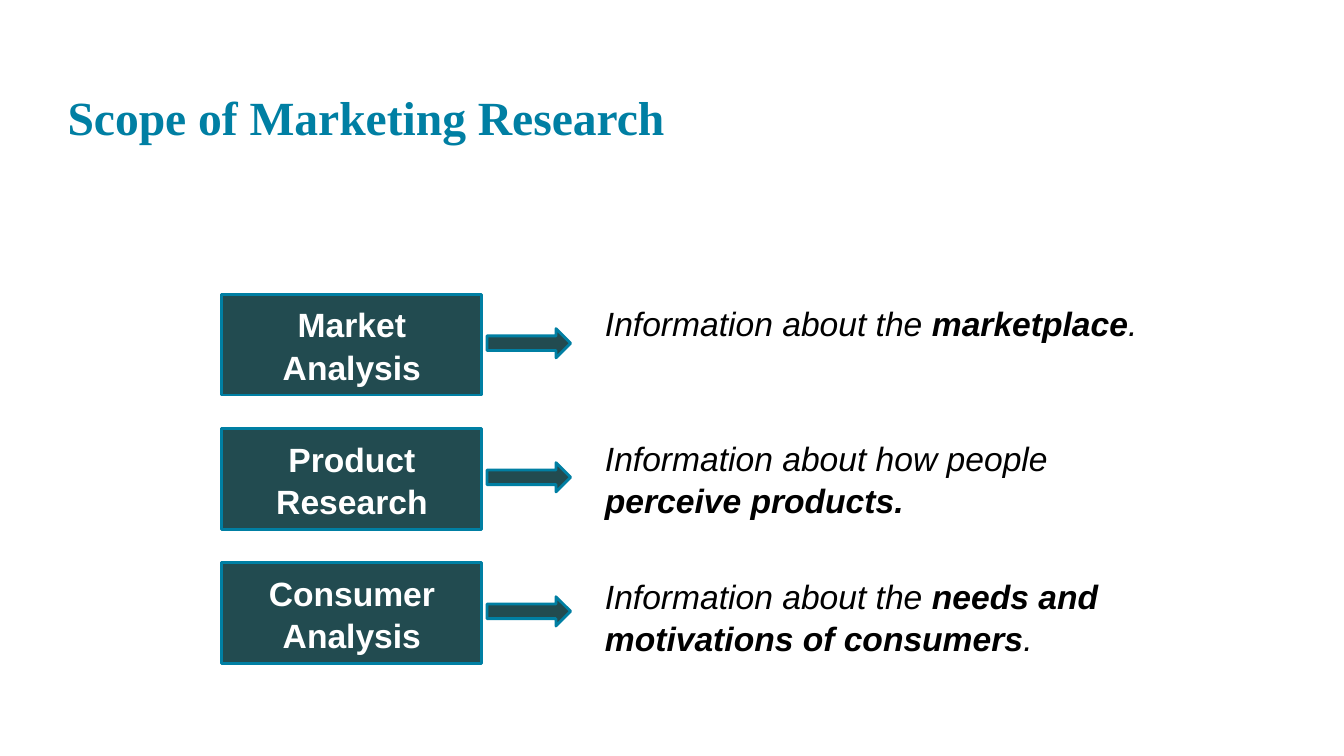
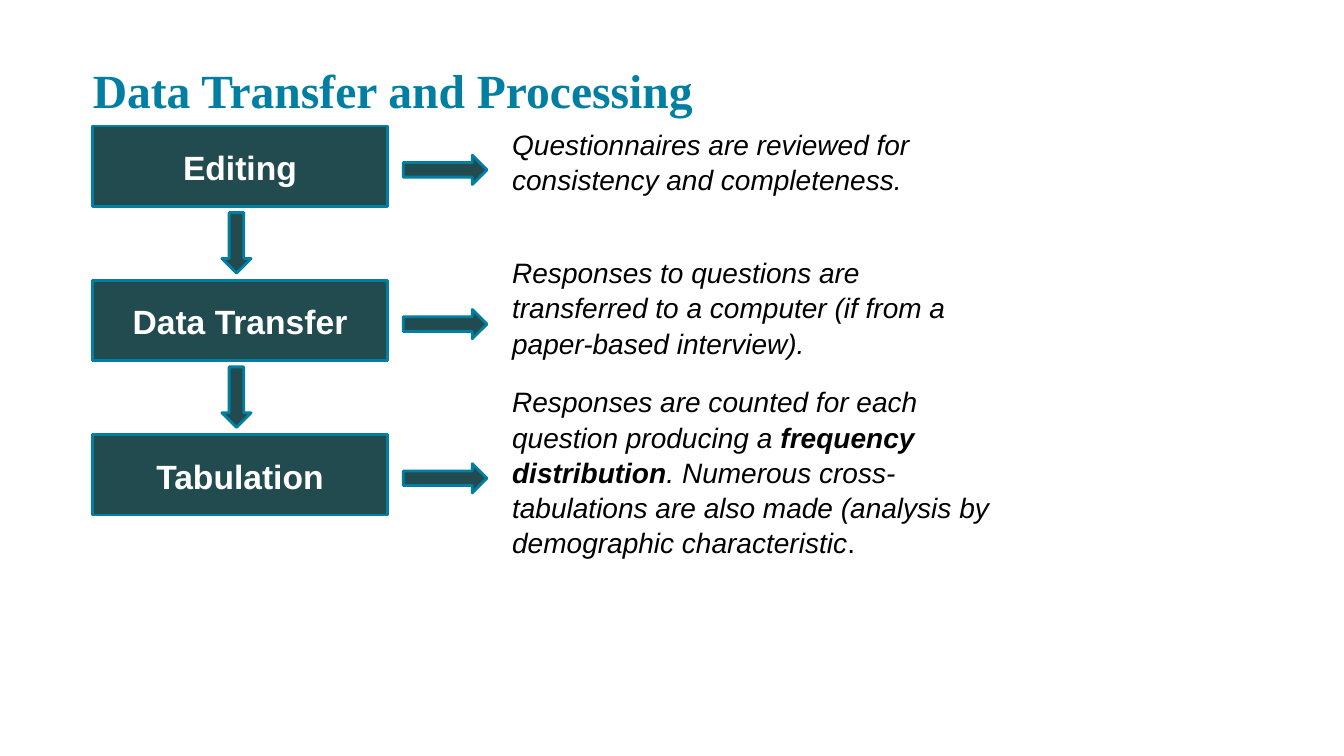
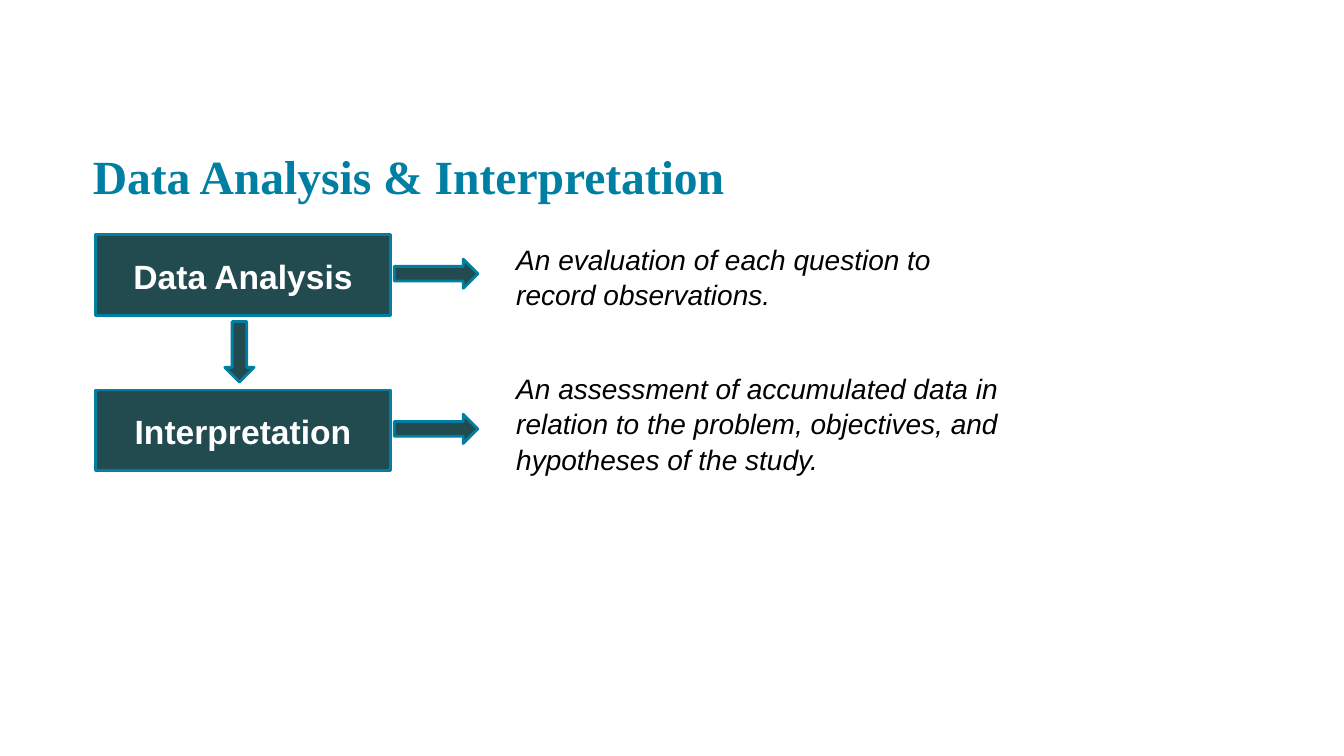
from pptx import Presentation
from pptx.dml.color import RGBColor
from pptx.enum.shapes import MSO_SHAPE
from pptx.enum.text import MSO_ANCHOR, MSO_AUTO_SIZE, PP_ALIGN
from pptx.util import Inches, Pt

RECTANGLE = MSO_SHAPE.RECTANGLE
RIGHT_ARROW = MSO_SHAPE.RIGHT_ARROW
DOWN_ARROW = MSO_SHAPE.DOWN_ARROW
TOP, MIDDLE, BOTTOM = MSO_ANCHOR.TOP, MSO_ANCHOR.MIDDLE, MSO_ANCHOR.BOTTOM
LEFT, CENTER = PP_ALIGN.LEFT, PP_ALIGN.CENTER
NO_AUTOFIT = MSO_AUTO_SIZE.NONE
TITLE_ONLY = 5

PLAIN = {"italic": True, "bold": False}
STRONG = {"italic": True, "bold": True}
UPRIGHT = {"italic": False, "bold": False}


def color(value):
    return RGBColor.from_string(value)


class Deck:
    teal = "007FA3"
    dark = "224B50"
    title_font = {"name": "Times New Roman", "size": Pt(34), "bold": True}
    label_font = {"name": "Arial", "size": Pt(24), "bold": True}
    arrow_length = 0.83
    arrow_width = 0.29

    def __init__(self):
        self.presentation = Presentation()
        self.presentation.slide_width = Inches(13.33)
        self.presentation.slide_height = Inches(7.5)
        self.slide = None

    def set_text(self, shape, runs, ink, anchor, alignment=LEFT, inset=0, spacing=1.0):
        frame = shape.text_frame
        settings = {"word_wrap": True, "auto_size": NO_AUTOFIT, "vertical_anchor": anchor}
        for side in ("left", "top", "right", "bottom"):
            settings["margin_" + side] = Inches(inset)
        for name, value in settings.items():
            setattr(frame, name, value)
        paragraph = frame.paragraphs[0]
        paragraph.alignment = alignment
        paragraph.line_spacing = spacing
        paragraph.space_before = Pt(0)
        for text, font_format in runs:
            run = paragraph.add_run()
            run.text = text
            run.font.color.rgb = color(ink)
            for name, value in font_format.items():
                setattr(run.font, name, value)

    def start(self, text, left, top, width, height):
        layout = self.presentation.slide_layouts[TITLE_ONLY]
        self.slide = self.presentation.slides.add_slide(layout)
        title = self.slide.shapes.title
        place = {"left": left, "top": top, "width": width, "height": height}
        for name, value in place.items():
            setattr(title, name, Inches(value))
        self.set_text(title, [(text, self.title_font)], self.teal, BOTTOM)

    def block(self, kind, left, top, width, height):
        shape = self.slide.shapes.add_shape(
            kind, Inches(left), Inches(top), Inches(width), Inches(height))
        shape.shadow.inherit = False
        shape.fill.solid()
        shape.fill.fore_color.rgb = color(self.dark)
        shape.line.color.rgb = color(self.teal)
        shape.line.width = Pt(2)
        return shape

    def label(self, text, left, top, width, height, inset):
        box = self.block(RECTANGLE, left, top, width, height)
        self.set_text(box, [(text, self.label_font)], "FFFFFF", MIDDLE, CENTER, inset, 1.05)

    def right_arrow(self, left, top):
        self.block(RIGHT_ARROW, left, top, self.arrow_length, self.arrow_width)

    def down_arrow(self, left, top):
        self.block(DOWN_ARROW, left, top, self.arrow_width, 0.6)

    def description(self, runs, left, top, width, height, size):
        box = self.slide.shapes.add_textbox(
            Inches(left), Inches(top), Inches(width), Inches(height))
        base = {"name": "Arial", "size": Pt(size)}
        styled = [(text, {**base, **style}) for text, style in runs]
        self.set_text(box, styled, "000000", TOP, spacing=1.05)

    def rows(self, rows, left, top, pitch, width, height, arrow_left, arrow_drop,
             text_left, size, inset=0, chained=False):
        for index, (label, text_top, text_width, text_height, runs) in enumerate(rows):
            row_top = top + index * pitch
            self.label(label, left, row_top, width, height, inset)
            self.right_arrow(arrow_left, row_top + arrow_drop)
            self.description(runs, text_left, text_top, text_width, text_height, size)
            if chained and index < len(rows) - 1:
                self.down_arrow(left + 1.28, row_top + height + 0.06)


def main():
    deck = Deck()

    deck.start("Scope of Marketing Research", 0.67, 0.24, 12, 1.2)
    deck.rows([
        ("Market Analysis", 2.99, 6.08, 0.8, [
            ("Information about the ", PLAIN), ("marketplace", STRONG), (".", PLAIN)]),
        ("Product Research", 4.32, 5.08, 0.8, [
            ("Information about how people ", PLAIN), ("perceive products.", STRONG)]),
        ("Consumer Analysis", 5.69, 5.08, 0.8, [
            ("Information about the ", PLAIN),
            ("needs and motivations of consumers", STRONG), (".", PLAIN)]),
    ], left=2.2, top=2.92, pitch=1.33, width=2.58, height=1, arrow_left=4.83,
        arrow_drop=0.34, text_left=6, size=24, inset=0.1)

    deck.start("Data Transfer and Processing", 0.92, 0.57, 9, 0.6)
    deck.rows([
        ("Editing", 1.25, 4.83, 0.8, [
            ("Questionnaires are reviewed for consistency and completeness.", PLAIN)]),
        ("Data Transfer", 2.52, 4.83, 1, [
            ("Responses to questions are transferred to a computer "
             "(if from a paper-based interview).", PLAIN)]),
        ("Tabulation", 3.8, 4.83, 1.72, [
            ("Responses are counted for each question producing a ", PLAIN),
            ("frequency distribution", STRONG),
            (". Numerous cross-tabulations are also made "
             "(analysis by demographic characteristic", PLAIN),
            (".", UPRIGHT)]),
    ], left=0.92, top=1.25, pitch=1.53, width=2.92, height=0.8, arrow_left=4,
        arrow_drop=0.29, text_left=5.08, size=20, chained=True)

    deck.start("Data Analysis & Interpretation", 0.92, 0.84, 9, 1.18)
    deck.rows([
        ("Data Analysis", 2.39, 4.83, 0.8, [
            ("An evaluation of each question to record observations.", PLAIN)]),
        ("Interpretation", 3.67, 4.83, 1, [
            ("An assessment of accumulated data in relation to the problem, "
             "objectives, and hypotheses of the study.", PLAIN)]),
    ], left=0.95, top=2.33, pitch=1.54, width=2.92, height=0.8, arrow_left=3.91,
        arrow_drop=0.24, text_left=5.12, size=20, chained=True)

    deck.presentation.save("out.pptx")


if __name__ == "__main__":
    main()
